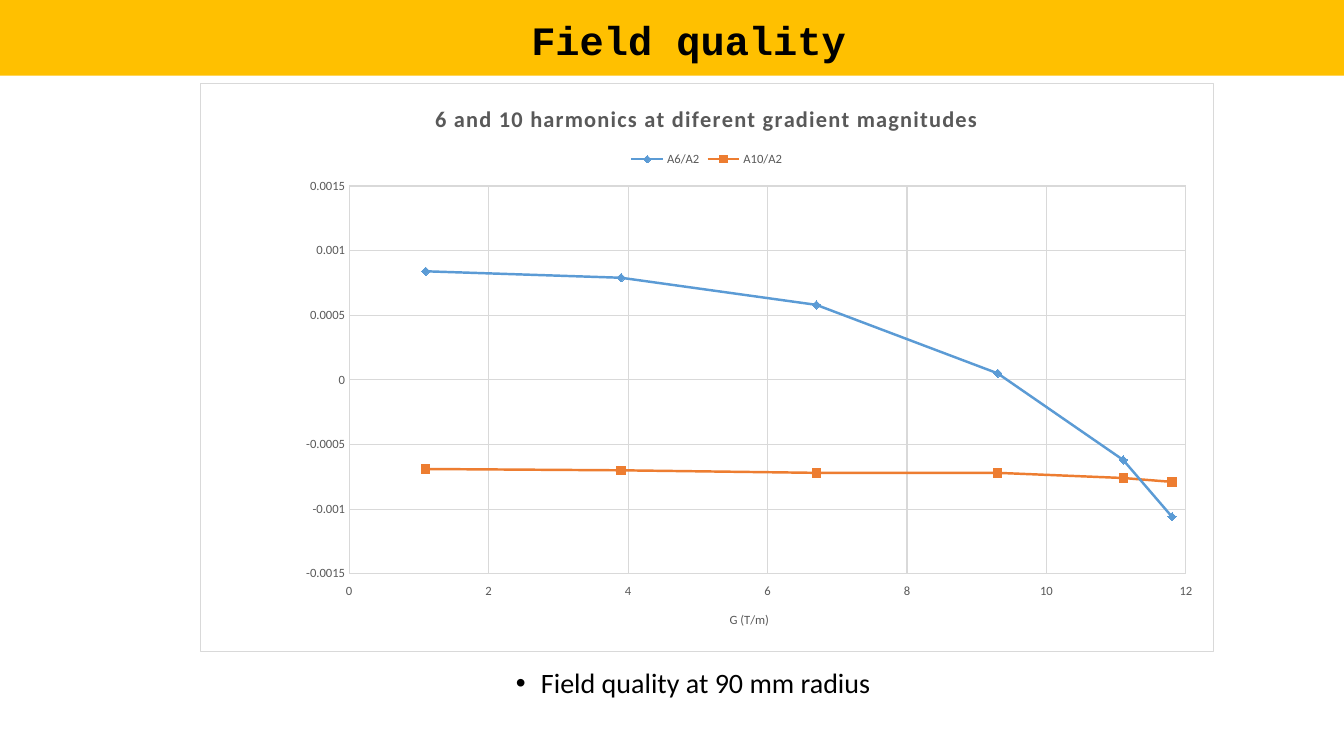
from lxml.etree import fromstring
from pptx import Presentation
from pptx.chart.data import XyChartData
from pptx.dml.color import RGBColor
from pptx.enum.chart import (XL_CHART_TYPE, XL_LEGEND_POSITION, XL_MARKER_STYLE,
                             XL_TICK_LABEL_POSITION, XL_TICK_MARK)
from pptx.enum.text import MSO_ANCHOR, MSO_AUTO_SIZE, PP_ALIGN
from pptx.oxml import parse_xml
from pptx.oxml.ns import nsdecls
from pptx.util import Inches, Pt


def paint(item, color):
    if hasattr(item, "solid"):
        item.solid()
        item.fore_color.rgb = RGBColor.from_string(color)
    else:
        item.rgb = RGBColor.from_string(color)


def style(font, size, color, name="Calibri", bold=False):
    font.size = Pt(size)
    font.name = name
    font.bold = bold
    paint(font.color, color)


deck = Presentation()
deck.slide_width = Inches(13.33)
deck.slide_height = Inches(7.5)
slide = deck.slides.add_slide(deck.slide_layouts[1])
title, body = slide.placeholders

for box, place in ((title, (0, 0, 13.33, 0.75)), (body, (3.61, 6.59, 6.53, 0.56))):
    box.left, box.top, box.width, box.height = map(Inches, place)
    box.text_frame.auto_size = MSO_AUTO_SIZE.NONE
    box.text_frame.word_wrap = True

paint(title.fill, "FFC000")
title.text_frame.vertical_anchor = MSO_ANCHOR.MIDDLE
head = title.text_frame.paragraphs[0]
head.text = " "
head.add_run().text = "Field quality"
style(head.runs[0].font, 39.6, "000000", "Courier New")
style(head.runs[1].font, 28.8, "000000", "Courier New", True)

body.text_frame.vertical_anchor = MSO_ANCHOR.TOP
body.text_frame.text = "Field quality at 90 mm radius"
note = body.text_frame.paragraphs[0]
style(note.runs[0].font, 20, "000000")
for para in (head, note):
    para.alignment = PP_ALIGN.CENTER
    para.line_spacing = 0.9
note.space_before = Pt(10)
props = note._p.get_or_add_pPr()
props.set("marL", str(Inches(0.25)))
props.set("indent", str(-Inches(0.25)))
props.append(parse_xml(f'<a:buFont {nsdecls("a")} typeface="Arial"/>'))
props.append(parse_xml(f'<a:buChar {nsdecls("a")} char="•"/>'))

grads = (11.8, 11.1, 9.3, 6.7, 3.9, 1.1)
lines = (
    ("A6/A2", "5B9BD5", XL_MARKER_STYLE.DIAMOND,
     (-0.00106, -0.00062, 0.00005, 0.00058, 0.00079, 0.00084)),
    ("A10/A2", "ED7D31", XL_MARKER_STYLE.SQUARE,
     (-0.00079, -0.00076, -0.00072, -0.00072, -0.0007, -0.00069)),
)
data = XyChartData()
for name, color, mark, vals in lines:
    row = data.add_series(name)
    for x, y in zip(grads, vals):
        row.add_data_point(x, y)

chart = slide.shapes.add_chart(
    XL_CHART_TYPE.XY_SCATTER_SMOOTH, Inches(1.98), Inches(0.82),
    Inches(10.06), Inches(5.65), data).chart
style(chart.font, 10, "000000")

chart.has_title = True
chart.chart_title.include_in_layout = False
chart.chart_title.text_frame.text = "6 and 10 harmonics at diferent gradient magnitudes"
run = chart.chart_title.text_frame.paragraphs[0].runs[0]
style(run.font, 16, "595959", bold=True)
run.font._element.set("spc", "100")

chart.has_legend = True
chart.legend.position = XL_LEGEND_POSITION.TOP
chart.legend.include_in_layout = False
style(chart.legend.font, 9, "595959")

for plot, (name, color, mark, vals) in zip(chart.plots[0].series, lines):
    plot.smooth = True
    plot.format.line.width = Pt(1.75)
    paint(plot.format.line.fill, color)
    plot.marker.style = mark
    plot.marker.size = 6
    paint(plot.marker.format.fill, color)
    paint(plot.marker.format.line.fill, color)
chart.plots[0].vary_by_categories = False

across, up = chart.category_axis, chart.value_axis
for axis, low, high in ((across, 0, 12), (up, -0.0015, 0.0015)):
    axis.minimum_scale, axis.maximum_scale = low, high
    axis.major_tick_mark = axis.minor_tick_mark = XL_TICK_MARK.NONE
    axis.has_major_gridlines = True
    for part in (axis, axis.major_gridlines):
        part.format.line.width = Pt(0.75)
        paint(part.format.line.fill, "D9D9D9")
    style(axis.tick_labels.font, 9, "595959")
    axis.tick_labels.number_format = "General"
    axis.tick_labels.number_format_is_linked = False
across.tick_label_position = XL_TICK_LABEL_POSITION.LOW
across.has_title = True
across.axis_title.text_frame.text = "G (T/m)"
style(across.axis_title.text_frame.paragraphs[0].runs[0].font, 9, "595959")

area = chart._chartSpace.chart.plotArea
for old in area.findall("{*}layout"):
    area.remove(old)
spots = "".join(f'<c:{key} val="{val}"/>' for key, val in
                (("x", 0.147), ("y", 0.181), ("w", 0.826), ("h", 0.682)))
area.insert(0, parse_xml(
    f'<c:layout {nsdecls("c")}><c:manualLayout><c:layoutTarget val="inner"/>'
    f'<c:xMode val="edge"/><c:yMode val="edge"/>{spots}</c:manualLayout></c:layout>'))
chart._chartSpace.chart.addnext(parse_xml(
    f'<c:spPr {nsdecls("c", "a")}><a:solidFill><a:srgbClr val="FFFFFF"/></a:solidFill>'
    '<a:ln w="9525"><a:solidFill><a:srgbClr val="D9D9D9"/></a:solidFill></a:ln></c:spPr>'))

deck.save("out.pptx")
